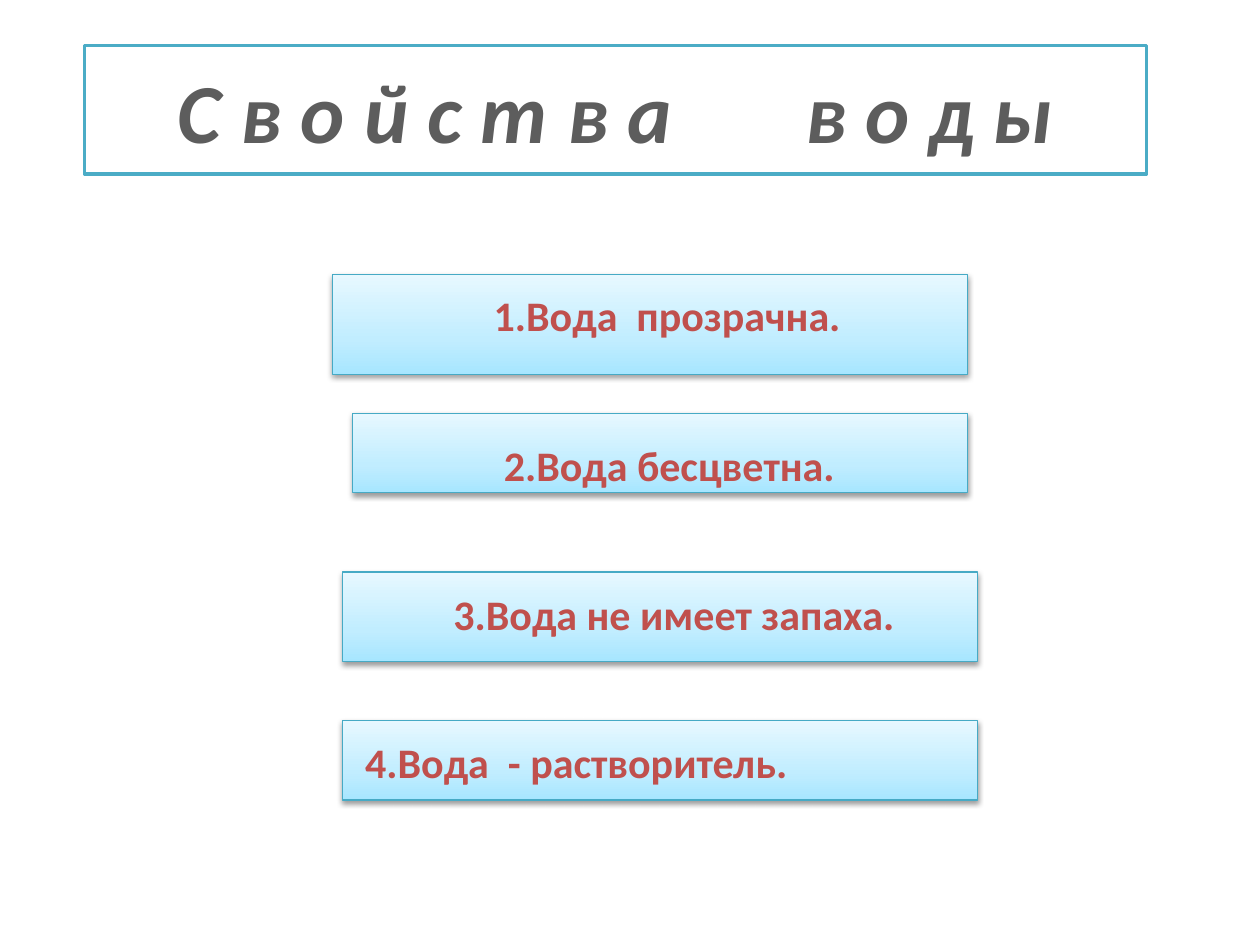
import copy
from typing import NamedTuple

import pptx
import pptx.dml.color
import pptx.enum.shapes
import pptx.enum.text
import pptx.oxml
import pptx.oxml.ns
import pptx.util

Inches = pptx.util.Inches
Pt = pptx.util.Pt
qn = pptx.oxml.ns.qn
RECT = pptx.enum.shapes.MSO_SHAPE.RECTANGLE

COLORS = {
    "background": "FFFFFF",
    "title": "5D5D5D",
    "title_border": "4BACC6",
    "panel_border": "46AAC5",
    "label": "C0504D",
}
PANEL_STOPS = [(0, "A7E6FF"), (0.35, "C1EDFF"), (1, "E7F8FF")]
TITLE_FONT = {"name": "Calibri", "size": Pt(48), "bold": True, "italic": True}
LABEL_FONT = {"name": "Calibri", "size": Pt(24), "bold": True}
SHADOW = (
    f'<a:outerShdw {pptx.oxml.ns.nsdecls("a")} blurRad="{Pt(3.1)}" dist="{Pt(1.6)}" '
    'dir="5400000" rotWithShape="0"><a:srgbClr val="000000">'
    '<a:alpha val="38000"/></a:srgbClr></a:outerShdw>'
)


class Box(NamedTuple):
    left: float
    top: float
    width: float
    height: float

    def lengths(self) -> list:
        return [Inches(v) for v in self]


class Property(NamedTuple):
    text: str
    panel: Box
    label: Box


TITLE_BOX = Box(0.67, 0.36, 8.43, 1.02)
PROPERTIES = [
    Property("1.Вода  прозрачна.", Box(2.64, 2.18, 5.04, 0.79), Box(3.82, 2.25, 4.65, 0.5)),
    Property("2.Вода бесцветна.", Box(2.8, 3.28, 4.88, 0.63), Box(3.9, 3.44, 4.72, 0.5)),
    Property("3.Вода не имеет запаха.", Box(2.72, 4.54, 5.04, 0.71), Box(3.5, 4.62, 5.12, 0.5)),
    Property("4.Вода  - растворитель.", Box(2.72, 5.72, 5.04, 0.63), Box(2.8, 5.8, 5.12, 0.5)),
]


def rgb(value: str) -> pptx.dml.color.RGBColor:
    return pptx.dml.color.RGBColor.from_string(value)


def add_run(p, text: str, font: dict, color: str):
    r = p.add_run()
    r.text = text
    for name, value in font.items():
        setattr(r.font, name, value)
    r.font.color.rgb = rgb(COLORS[color])
    return r


def add_rect(slide, box: Box, border: str, border_width: float):
    sp = slide.shapes.add_shape(RECT, *box.lengths())
    sp.shadow.inherit = False
    sp.line.color.rgb = rgb(COLORS[border])
    sp.line.width = Pt(border_width)
    return sp


def add_title(slide) -> None:
    sp = add_rect(slide, TITLE_BOX, "title_border", 2)
    sp.fill.solid()
    sp.fill.fore_color.rgb = rgb(COLORS["background"])
    tf = sp.text_frame
    tf.word_wrap = False
    tf.vertical_anchor = pptx.enum.text.MSO_ANCHOR.MIDDLE
    p = tf.paragraphs[0]
    p.alignment = pptx.enum.text.PP_ALIGN.CENTER
    add_run(p, "С в о й с т в а", TITLE_FONT, "title")
    gap = add_run(p, " ", TITLE_FONT, "title")
    gap.font._element.set("spc", "6500")
    add_run(p, "в о д ы", TITLE_FONT, "title")


def add_panel(slide, box: Box) -> None:
    """Draw a rectangle with a three-stop gradient and a soft shadow below."""
    sp = add_rect(slide, box, "panel_border", 0.75)
    sp.fill.gradient()
    sp.fill.gradient_angle = 90
    props = sp._element.spPr
    stops = props.find(".//" + qn("a:gsLst"))
    stops.append(copy.deepcopy(stops[0]))
    for stop, (position, color) in zip(sp.fill.gradient_stops, PANEL_STOPS):
        stop.position = position
        stop.color.rgb = rgb(color)
    props.find(qn("a:effectLst")).append(pptx.oxml.parse_xml(SHADOW))


def add_label(slide, text: str, box: Box) -> None:
    tf = slide.shapes.add_textbox(*box.lengths()).text_frame
    tf.word_wrap = True
    tf.auto_size = pptx.enum.text.MSO_AUTO_SIZE.SHAPE_TO_FIT_TEXT
    add_run(tf.paragraphs[0], text, LABEL_FONT, "label")


def main() -> None:
    prs = pptx.Presentation()
    prs.slide_width, prs.slide_height = Inches(10), Inches(7.5)
    slide = prs.slides.add_slide(prs.slide_layouts[6])
    add_title(slide)
    for item in PROPERTIES:
        add_panel(slide, item.panel)
        add_label(slide, item.text, item.label)
    prs.save("out.pptx")


if __name__ == "__main__":
    main()
